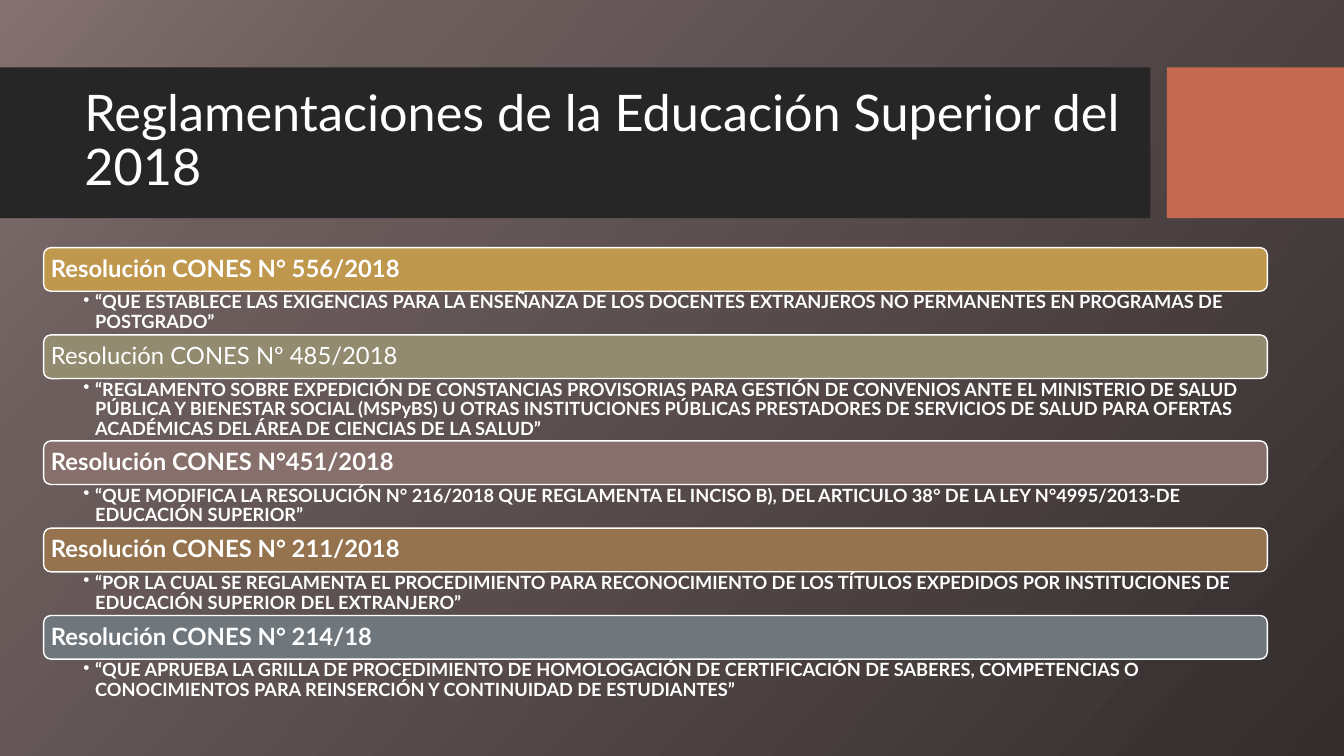
from copy import deepcopy

from lxml import etree
from pptx import Presentation
from pptx import util as u
from pptx.dml.color import RGBColor
from pptx.enum import shapes, text
from pptx.oxml.ns import qn

COLORS = {
    "white": "FFFFFF", "band": "262626", "accent": "C66951",
    "gold": "BF974D", "olive": "928B70", "mauve": "87706B",
    "brown": "94734E", "slate": "6F777D",
    "light": "837070", "middle": "6D5E5E", "dark": "342D2D",
}
BACKGROUND_STOPS = [(0, "light"), (0.21, "middle"), (1, "dark")]

TITLE_FORMAT = {"size": u.Pt(36), "bold": False}
BAR_FORMAT = {"size": u.Pt(17), "bold": True}
DETAIL_FORMAT = {"size": u.Pt(13), "bold": True}

LIST_LEFT, LIST_TOP, LIST_WIDTH = 1.1, 6.24, 30.84
BAR_HEIGHT = 1.1

# Heading, heading is bold, bar colour, detail height, detail
RESOLUTIONS = [
    ("Resolución CONES N° 556/2018", True, "gold", 1.1,
     "“QUE ESTABLECE LAS EXIGENCIAS PARA LA ENSEÑANZA DE LOS DOCENTES EXTRANJEROS "
     "NO PERMANENTES EN PROGRAMAS DE POSTGRADO”"),
    ("Resolución CONES Nº 485/2018", False, "olive", 1.57,
     "“REGLAMENTO SOBRE EXPEDICIÓN DE CONSTANCIAS PROVISORIAS PARA GESTIÓN DE "
     "CONVENIOS ANTE EL MINISTERIO DE SALUD PÚBLICA Y BIENESTAR SOCIAL (MSPyBS) U "
     "OTRAS INSTITUCIONES PÚBLICAS PRESTADORES DE SERVICIOS DE SALUD PARA OFERTAS "
     "ACADÉMICAS DEL ÁREA DE CIENCIAS DE LA SALUD”"),
    ("Resolución CONES N°451/2018", True, "mauve", 1.1,
     "“QUE MODIFICA LA RESOLUCIÓN N° 216/2018 QUE REGLAMENTA EL INCISO B), DEL "
     "ARTICULO 38° DE LA LEY N°4995/2013-DE EDUCACIÓN SUPERIOR”"),
    ("Resolución CONES N° 211/2018", True, "brown", 1.1,
     "“POR LA CUAL SE REGLAMENTA EL PROCEDIMIENTO PARA RECONOCIMIENTO DE LOS "
     "TÍTULOS EXPEDIDOS POR INSTITUCIONES DE EDUCACIÓN SUPERIOR DEL EXTRANJERO”"),
    ("Resolución CONES N° 214/18", True, "slate", 1.1,
     "“QUE APRUEBA LA GRILLA DE PROCEDIMIENTO DE HOMOLOGACIÓN DE CERTIFICACIÓN DE "
     "SABERES, COMPETENCIAS O CONOCIMIENTOS PARA REINSERCIÓN Y CONTINUIDAD DE "
     "ESTUDIANTES”"),
]


def color(name):
    return RGBColor.from_string(COLORS[name])


def paint_background(page):
    fill = page.background.fill
    fill.gradient()
    fill.gradient_angle = 360 - 42
    # The default gradient has two stops; add the third
    stop_list = next(page.element.iter(qn("a:gsLst")))
    stop_list.insert(1, deepcopy(stop_list[0]))
    for stop, (position, name) in zip(fill.gradient_stops, BACKGROUND_STOPS):
        stop.position = position
        stop.color.rgb = color(name)


def add_block(page, kind, area, fill, outline=None):
    block = page.shapes.add_shape(kind, *map(u.Cm, area))
    block.shadow.inherit = False
    block.fill.solid()
    block.fill.fore_color.rgb = color(fill)
    if outline:
        block.line.color.rgb = color(outline)
        block.line.width = u.Pt(1)
    else:
        block.line.fill.background()
    return block


def add_bullet(para, indent):
    properties = para._p.get_or_add_pPr()
    properties.set("marL", str(indent))
    properties.set("indent", str(-indent))
    etree.SubElement(properties, qn("a:buChar")).set("char", "•")


def write(box, words, font_format, insets, anchor, bullet=False):
    frame = box.text_frame
    frame_format = {"word_wrap": True, "vertical_anchor": anchor}
    sides = ("margin_left", "margin_top", "margin_right", "margin_bottom")
    frame_format.update(zip(sides, map(u.Cm, insets)))
    for name, value in frame_format.items():
        setattr(frame, name, value)

    para = frame.paragraphs[0]
    if bullet:
        add_bullet(para, u.Cm(0.3))
    para.alignment = text.PP_ALIGN.LEFT
    para.line_spacing = 0.9
    span = para.add_run()
    span.text = words
    for name, value in {"name": "Lato", **font_format}.items():
        setattr(span.font, name, value)
    span.font.color.rgb = color("white")


def add_title(page):
    rectangle = shapes.MSO_SHAPE.RECTANGLE
    add_block(page, rectangle, (0, 1.7, 28.99, 3.8), "band")
    add_block(page, rectangle, (29.41, 1.7, 4.46, 3.8), "accent")
    box = page.shapes.add_textbox(*map(u.Cm, (1.88, 2.08, 26.7, 3)))
    write(box, "Reglamentaciones de la Educación Superior del 2018", TITLE_FORMAT,
          (0.25, 0.13, 0.25, 0.13), text.MSO_ANCHOR.MIDDLE)


def add_resolution(page, top, heading, bold, fill, height, detail):
    bar = add_block(page, shapes.MSO_SHAPE.ROUNDED_RECTANGLE,
                    (LIST_LEFT, top, LIST_WIDTH, BAR_HEIGHT), fill, "white")
    write(bar, heading, {**BAR_FORMAT, "bold": bold},
          (0.13, 0, 0.13, 0), text.MSO_ANCHOR.MIDDLE)
    area = (LIST_LEFT, top + BAR_HEIGHT, LIST_WIDTH, height)
    box = page.shapes.add_textbox(*map(u.Cm, area))
    write(box, detail, DETAIL_FORMAT, (1, 0.05, 0.33, 0.05),
          text.MSO_ANCHOR.TOP, bullet=True)


def main():
    deck = Presentation()
    deck.slide_width, deck.slide_height = u.Cm(33.87), u.Cm(19.05)
    page = deck.slides.add_slide(deck.slide_layouts[6])
    paint_background(page)
    add_title(page)

    # Each resolution starts where the one above ends
    top = LIST_TOP
    for heading, bold, fill, height, detail in RESOLUTIONS:
        add_resolution(page, top, heading, bold, fill, height, detail)
        top += BAR_HEIGHT + height
    deck.save("out.pptx")


if __name__ == "__main__":
    main()
